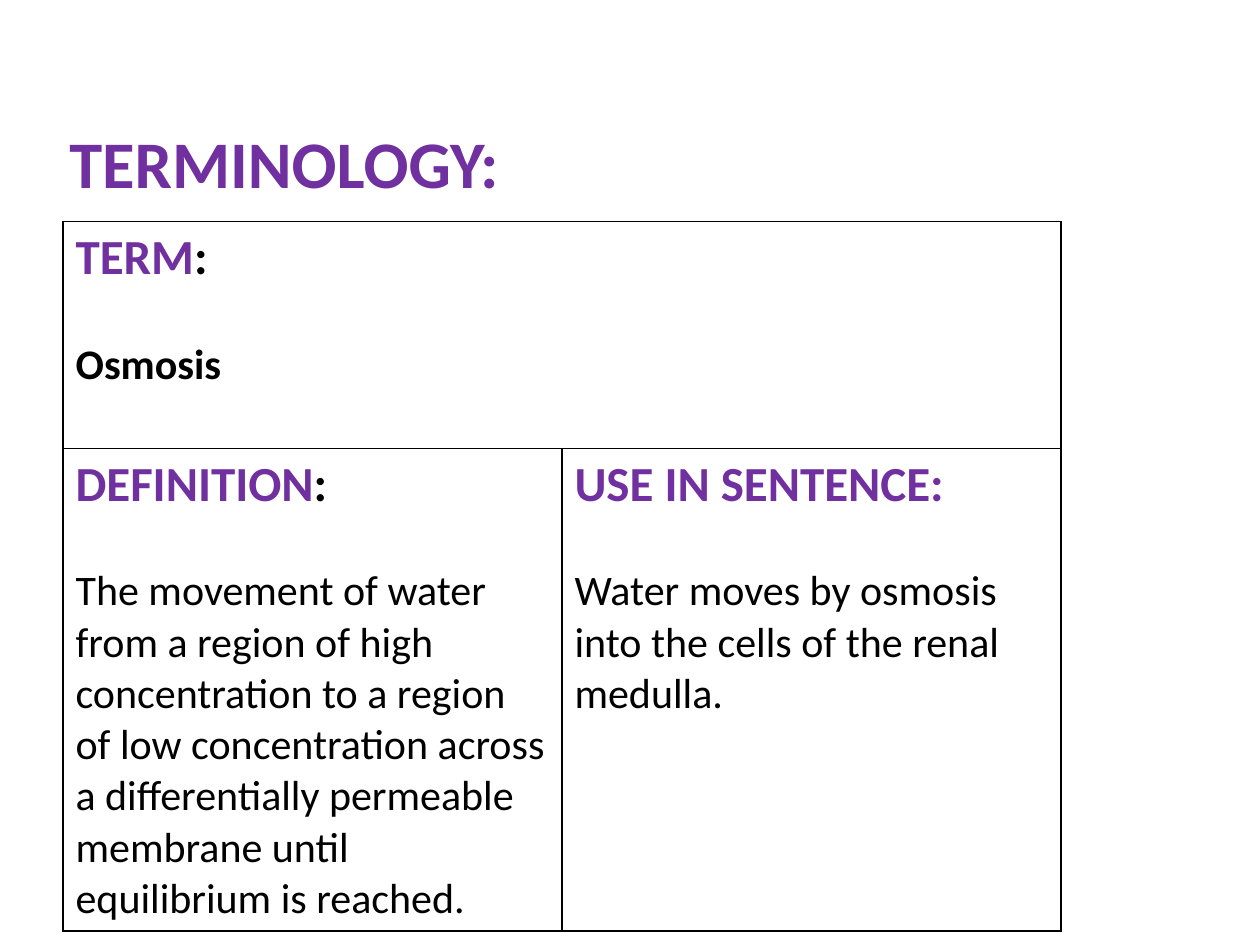
import lxml.etree
import pptx
import pptx.dml.color
import pptx.enum.text
import pptx.oxml.ns
import pptx.util
from pptx.util import Inches

PURPLE = pptx.dml.color.RGBColor(0x70, 0x30, 0xA0)
BLACK = pptx.dml.color.RGBColor(0x00, 0x00, 0x00)
FONT = "Calibri"


def add_text(paragraph, text, size=24, color=BLACK, bold=False):
    """Append one formatted run to a paragraph."""
    run = paragraph.add_run()
    run.text = text
    run.font.name = FONT
    run.font.size = pptx.util.Pt(size)
    run.font.color.rgb = color
    run.font.bold = bold


def set_borders(cell, color=BLACK, width=1):
    """Draw a solid border on all four sides of a cell."""
    properties = cell._tc.get_or_add_tcPr()
    for index, side in enumerate(("a:lnL", "a:lnR", "a:lnT", "a:lnB")):
        line = lxml.etree.Element(pptx.oxml.ns.qn(side), w=str(pptx.util.Pt(width)))
        fill = lxml.etree.SubElement(line, pptx.oxml.ns.qn("a:solidFill"))
        lxml.etree.SubElement(fill, pptx.oxml.ns.qn("a:srgbClr"), val=str(color))
        properties.insert(index, line)


def fill_cell(cell, heading, colon, body, bold=False):
    """Write a purple heading and a body paragraph below it."""
    heading_paragraph = cell.text_frame.paragraphs[0]
    add_text(heading_paragraph, heading, size=28, color=PURPLE, bold=True)
    if colon:
        add_text(heading_paragraph, colon, size=28, bold=True)
    body_paragraph = cell.text_frame.add_paragraph()
    body_paragraph.space_before = pptx.util.Pt(29.3)
    add_text(body_paragraph, body, bold=bold)


def place_title(slide, left, top, width, height):
    """Move the title placeholder to its box and fill it."""
    title = slide.shapes.title
    title.left, title.top, title.width, title.height = left, top, width, height
    frame = title.text_frame
    frame.vertical_anchor = pptx.enum.text.MSO_ANCHOR.BOTTOM
    frame.margin_left = frame.margin_right = Inches(0.05)
    frame.margin_top = frame.margin_bottom = 0
    paragraph = frame.paragraphs[0]
    paragraph.alignment = pptx.enum.text.PP_ALIGN.LEFT
    add_text(paragraph, "TERMINOLOGY:", size=38, color=PURPLE, bold=True)


def place_term_table(slide, left, top, width, row_heights):
    """Add the table with the term above its definition and sentence."""
    table = slide.shapes.add_table(2, 2, left, top, width, sum(row_heights)).table
    table.first_row = table.horz_banding = False
    for row, height in zip(table.rows, row_heights):
        row.height = height
    for cell in table.iter_cells():
        cell.fill.background()
        set_borders(cell)
    table.cell(0, 0).merge(table.cell(0, 1))
    fill_cell(table.cell(0, 0), "TERM", ":", "Osmosis", bold=True)
    fill_cell(
        table.cell(1, 0), "DEFINITION", ":",
        "The movement of water from a region of high concentration to a region "
        "of low concentration across a differentially permeable membrane until "
        "equilibrium is reached.",
    )
    fill_cell(
        table.cell(1, 1), "USE IN SENTENCE:", "",
        "Water moves by osmosis into the cells of the renal medulla.",
    )


def main():
    """Build and save the terminology slide."""
    presentation = pptx.Presentation()
    presentation.slide_width, presentation.slide_height = Inches(10), Inches(7.5)
    slide = presentation.slides.add_slide(presentation.slide_layouts[5])
    left, width = Inches(0.5), Inches(7.92)
    place_title(slide, left, Inches(0.35), width, Inches(1.25))
    place_term_table(slide, left, Inches(1.76), width, (Inches(1.8), Inches(3.83)))
    presentation.save("out.pptx")


if __name__ == "__main__":
    main()
